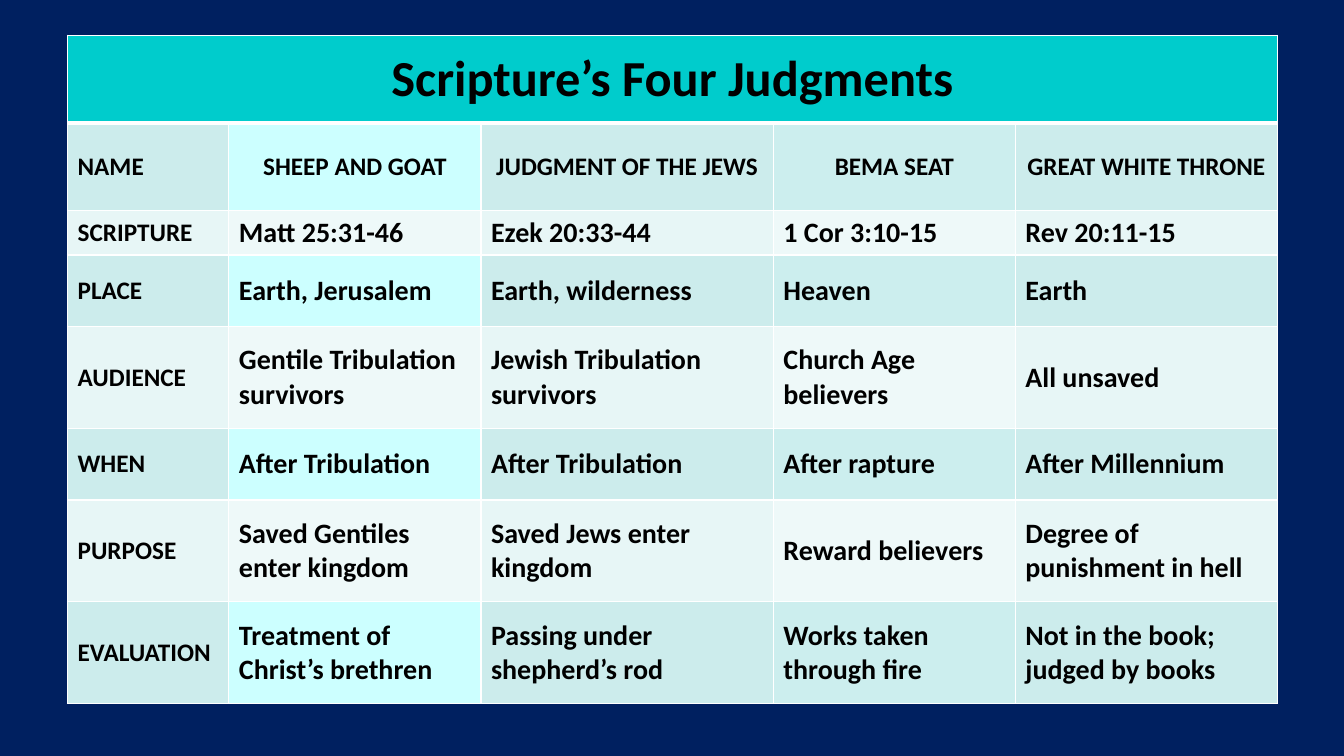
from lxml.etree import SubElement
from pptx import Presentation
from pptx.dml.color import RGBColor
from pptx.enum.text import MSO_ANCHOR, PP_ALIGN
from pptx.oxml.ns import qn
from pptx.util import Emu, Pt

TITLE = "Scripture’s Four Judgments"
JUDGMENTS = [
    ("NAME", "SHEEP AND GOAT", "JUDGMENT OF THE JEWS", "BEMA SEAT", "GREAT WHITE THRONE"),
    ("SCRIPTURE", "Matt 25:31-46", "Ezek 20:33-44", "1 Cor 3:10-15", "Rev 20:11-15"),
    ("PLACE", "Earth, Jerusalem", "Earth, wilderness", "Heaven", "Earth"),
    ("AUDIENCE", "Gentile Tribulation survivors", "Jewish Tribulation survivors",
     "Church Age believers", "All unsaved"),
    ("WHEN", "After Tribulation", "After Tribulation", "After rapture", "After Millennium"),
    ("PURPOSE", "Saved Gentiles enter kingdom", "Saved Jews enter kingdom",
     "Reward believers", "Degree of punishment in hell"),
    ("EVALUATION", "Treatment of Christ’s brethren", "Passing under shepherd’s rod",
     "Works taken through fire", "Not in the book; judged by books"),
]
COLORS = {
    "background": "002060", "title": "00CCCC", "text": "000000", "border": "FFFFFF",
    "dark": "CCECEC", "dark_sheep": "CCFFFF", "dark_bema": "CCEEEE",
    "light": "E7F6F6", "light_accent": "EEF9F9",
}
DARK_FILLS = ("dark", "dark_sheep", "dark", "dark_bema", "dark")
LIGHT_FILLS = ("light", "light_accent", "light", "light_accent", "light")
FONT = "Calibri"
TITLE_SIZE, LABEL_SIZE, BODY_SIZE = 36, 18, 20

PX = 9144
SLIDE_WIDTH, SLIDE_HEIGHT = 1333, 750
TABLE_LEFT, TABLE_TOP = 67, 35
COLUMN_WIDTHS = (160, 250, 290, 240, 260)
ROW_HEIGHTS = (87, 87, 44, 71, 101, 71, 101, 101)


def px(length):
    return Emu(length * PX)


def color(name):
    return RGBColor.from_string(COLORS[name])


def add_borders(cell, row):
    properties = cell._tc.get_or_add_tcPr()
    widths = {"lnL": 1, "lnR": 1, "lnT": 3 if row == 1 else 1, "lnB": 3 if row == 0 else 1}
    for side, width in widths.items():
        line = SubElement(properties, qn(f"a:{side}"), w=str(Pt(width)))
        fill = SubElement(line, qn("a:solidFill"))
        SubElement(fill, qn("a:srgbClr"), val=COLORS["border"])


def fill_cell(cell, text, fill_name, size, alignment):
    cell.fill.solid()
    cell.fill.fore_color.rgb = color(fill_name)
    cell.vertical_anchor = MSO_ANCHOR.MIDDLE
    cell.margin_left = cell.margin_right = px(10)
    cell.margin_top = cell.margin_bottom = px(5)
    paragraph = cell.text_frame.paragraphs[0]
    paragraph.alignment = alignment
    run = paragraph.add_run()
    run.text = text
    run.font.name = FONT
    run.font.size = Pt(size)
    run.font.bold = True
    run.font.color.rgb = color("text")


def main():
    presentation = Presentation()
    presentation.slide_width = px(SLIDE_WIDTH)
    presentation.slide_height = px(SLIDE_HEIGHT)
    slide = presentation.slides.add_slide(presentation.slide_layouts[6])
    slide.background.fill.solid()
    slide.background.fill.fore_color.rgb = color("background")

    table = slide.shapes.add_table(
        len(ROW_HEIGHTS), len(COLUMN_WIDTHS), px(TABLE_LEFT), px(TABLE_TOP),
        px(sum(COLUMN_WIDTHS)), px(sum(ROW_HEIGHTS))).table
    for column, width in zip(table.columns, COLUMN_WIDTHS):
        column.width = px(width)
    for table_row, height in zip(table.rows, ROW_HEIGHTS):
        table_row.height = px(height)
    for row in range(len(ROW_HEIGHTS)):
        for column in range(len(COLUMN_WIDTHS)):
            add_borders(table.cell(row, column), row)

    title_cell = table.cell(0, 0)
    title_cell.merge(table.cell(0, len(COLUMN_WIDTHS) - 1))
    fill_cell(title_cell, TITLE, "title", TITLE_SIZE, PP_ALIGN.CENTER)

    for row, texts in enumerate(JUDGMENTS, start=1):
        fills = DARK_FILLS if row % 2 else LIGHT_FILLS
        for column, text in enumerate(texts):
            is_label = row == 1 or column == 0
            is_heading = row == 1 and column > 0
            fill_cell(table.cell(row, column), text, fills[column],
                      LABEL_SIZE if is_label else BODY_SIZE,
                      PP_ALIGN.CENTER if is_heading else PP_ALIGN.LEFT)

    presentation.save("out.pptx")


if __name__ == "__main__":
    main()
